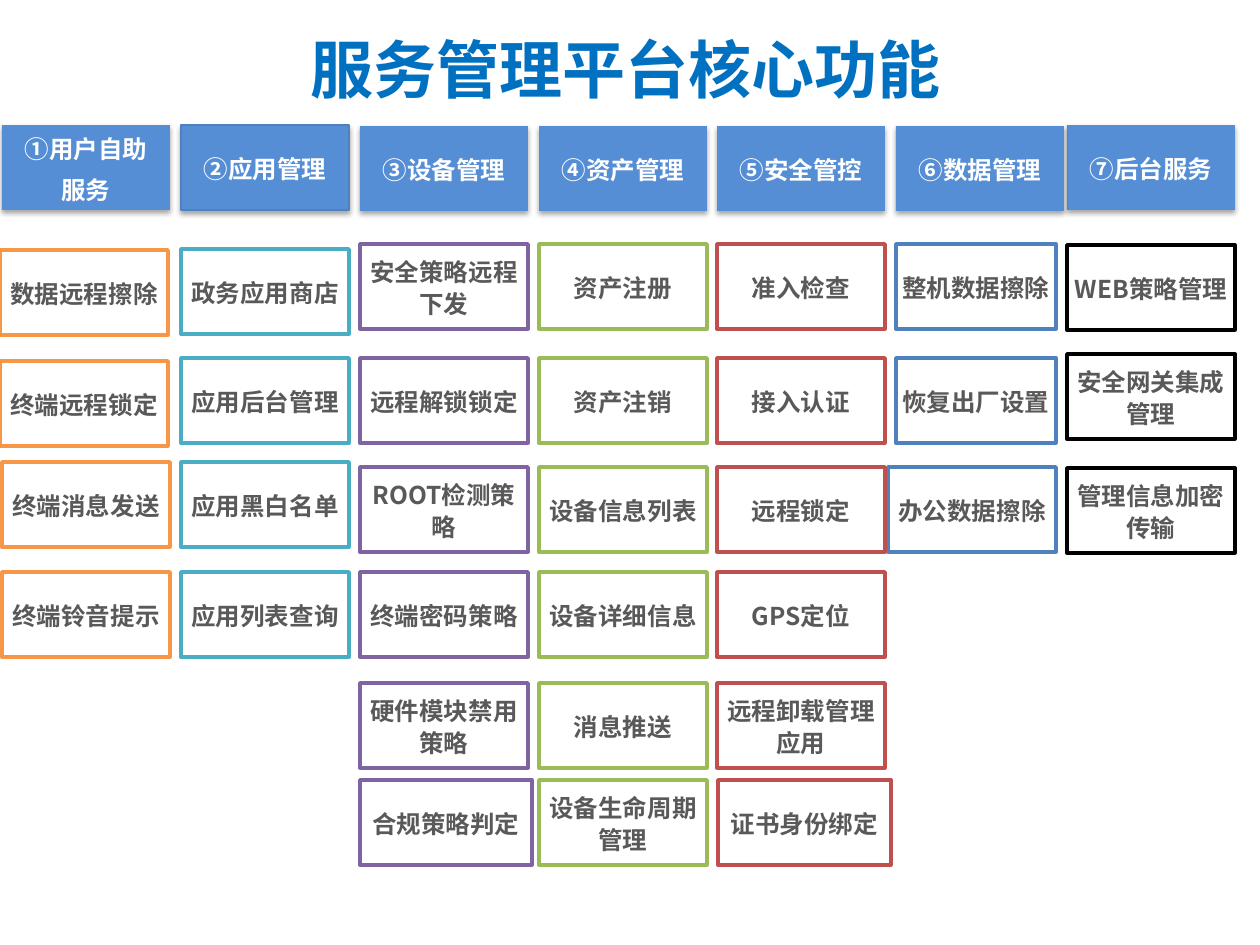
from dataclasses import dataclass

from lxml.etree import SubElement
from pptx import Presentation
from pptx.dml.color import RGBColor
from pptx.enum.shapes import MSO_SHAPE as Shape
from pptx.enum.text import MSO_ANCHOR as Anchor, PP_ALIGN as Align
from pptx.oxml.ns import qn
from pptx.util import Emu, Pt

PX = 914400 / 126
BOX_W, BOX_H = 168, 85
COLUMN_LEFT, COLUMN_STEP = 2, 179
ROW_TOPS = (244, 358, 467, 572, 683, 780)


@dataclass(frozen=True)
class Theme:
    font: str = "Noto Sans CJK SC"
    title_font: str = "Arial"
    title: str = "0070C0"
    header: str = "558ED5"
    header_line: str = "4F81BD"
    header_text: str = "FFFFFF"
    cell: str = "FFFFFF"
    cell_text: str = "595959"
    shadow: str = "000000"
    title_size: int = 36
    text_size: int = 14


@dataclass(frozen=True)
class Column:
    header: str
    color: str
    cells: tuple
    tops: tuple = ROW_TOPS
    left: int = 0
    header_top: int = 126
    header_line: bool = False
    frames: tuple = ()  # (row, left, width) where a cell leaves the grid


def px(value):
    return Emu(round(value * PX))


class Page:
    def __init__(self, deck, theme):
        self.theme = theme
        self.slide = deck.slides.add_slide(deck.slide_layouts[6])

    def set_text(self, shape, text, size, color, font, insets,
                 line_spacing=None, space_after=None):
        frame = shape.text_frame
        frame.word_wrap = True
        frame.vertical_anchor = Anchor.MIDDLE
        (frame.margin_left, frame.margin_top,
         frame.margin_right, frame.margin_bottom) = map(px, insets)
        for index, line in enumerate(text.split("\n")):
            para = frame.add_paragraph() if index else frame.paragraphs[0]
            para.text = line
            para.alignment = Align.CENTER
            para.line_spacing = line_spacing
            para.space_after = space_after
            style = para.font
            style.size, style.bold, style.name = Pt(size), True, font
            style.color.rgb = RGBColor.from_string(color)
            latin = para._p.pPr.find(".//" + qn("a:latin"))
            SubElement(latin.getparent(), qn("a:ea"), typeface=self.theme.font)

    def title(self, text, left, top, width, height):
        box = self.slide.shapes.add_textbox(*map(px, (left, top, width, height)))
        self.set_text(box, text, self.theme.title_size, self.theme.title,
                      self.theme.title_font, (0, 4, 9, 4))

    def box(self, text, left, top, width, fill, color, line=None, line_width=2):
        box = self.slide.shapes.add_shape(
            Shape.RECTANGLE, *map(px, (left, top, width, BOX_H)))
        box.shadow.inherit = False
        box.fill.solid()
        box.fill.fore_color.rgb = RGBColor.from_string(fill)
        if line:
            box.line.color.rgb = RGBColor.from_string(line)
            box.line.width = Pt(line_width)
        else:
            box.line.fill.background()
        self.set_text(box, text, self.theme.text_size, color, self.theme.font,
                      (1, 1, 1, 1), line_spacing=1.1, space_after=Pt(5))
        return box

    def header(self, text, left, top, outlined):
        theme = self.theme
        box = self.box(text, left, top, BOX_W, theme.header, theme.header_text,
                       theme.header_line if outlined else None, 0.75)
        effects = box._element.spPr.find(qn("a:effectLst"))
        shadow = SubElement(effects, qn("a:outerShdw"), blurRad=str(Pt(3.1)),
                            dist=str(Pt(1.8)), dir="5400000", rotWithShape="0")
        color = SubElement(shadow, qn("a:srgbClr"), val=theme.shadow)
        SubElement(color, qn("a:alpha"), val="35000")

    def column(self, column, left):
        left = column.left or left
        self.header(column.header, left, column.header_top, column.header_line)
        frames = {row: (x, width) for row, x, width in column.frames}
        for row, (text, top) in enumerate(zip(column.cells, column.tops)):
            x, width = frames.get(row, (left, BOX_W))
            self.box(text, x, top, width, self.theme.cell,
                     self.theme.cell_text, column.color)


COLUMNS = (
    Column("①用户自助\n服务", "F79646",
           ("数据远程擦除", "终端远程锁定", "终端消息发送", "终端铃音提示"),
           tops=(250, 361, 462, 572), header_top=125,
           frames=((0, 0, BOX_W), (1, 0, BOX_W))),
    Column("②应用管理", "4BACC6",
           ("政务应用商店", "应用后台管理", "应用黑白名单", "应用列表查询"),
           tops=(249, 358, 462, 572), header_top=125, header_line=True),
    Column("③设备管理", "8064A2",
           ("安全策略远程下发", "远程解锁锁定", "ROOT检测策略",
            "终端密码策略", "硬件模块禁用策略", "合规策略判定"),
           frames=((5, 360, 172),)),
    Column("④资产管理", "9BBB59",
           ("资产注册", "资产注销", "设备信息列表",
            "设备详细信息", "消息推送", "设备生命周期管理")),
    Column("⑤安全管控", "C0504D",
           ("准入检查", "接入认证", "远程锁定",
            "GPS定位", "远程卸载管理应用", "证书身份绑定"),
           left=717, frames=((5, 718, 173),)),
    Column("⑥数据管理", "4F81BD",
           ("整机数据擦除", "恢复出厂设置", "办公数据擦除"), left=896,
           frames=((0, 896, 160), (1, 896, 160), (2, 888, BOX_W))),
    Column("⑦后台服务", "000000",
           ("WEB策略管理", "安全网关集成管理", "管理信息加密传输"),
           tops=(245, 354, 468), left=1067, header_top=125),
)


def main():
    deck = Presentation()
    deck.slide_width, deck.slide_height = px(1260), px(945)
    page = Page(deck, Theme())
    # Right to left, so that each column lies over its right neighbour.
    for index, column in reversed(list(enumerate(COLUMNS))):
        page.column(column, COLUMN_LEFT + index * COLUMN_STEP)
    page.title("服务管理平台核心功能", 0, 26, 1260, 85)
    deck.save("out.pptx")


if __name__ == "__main__":
    main()
